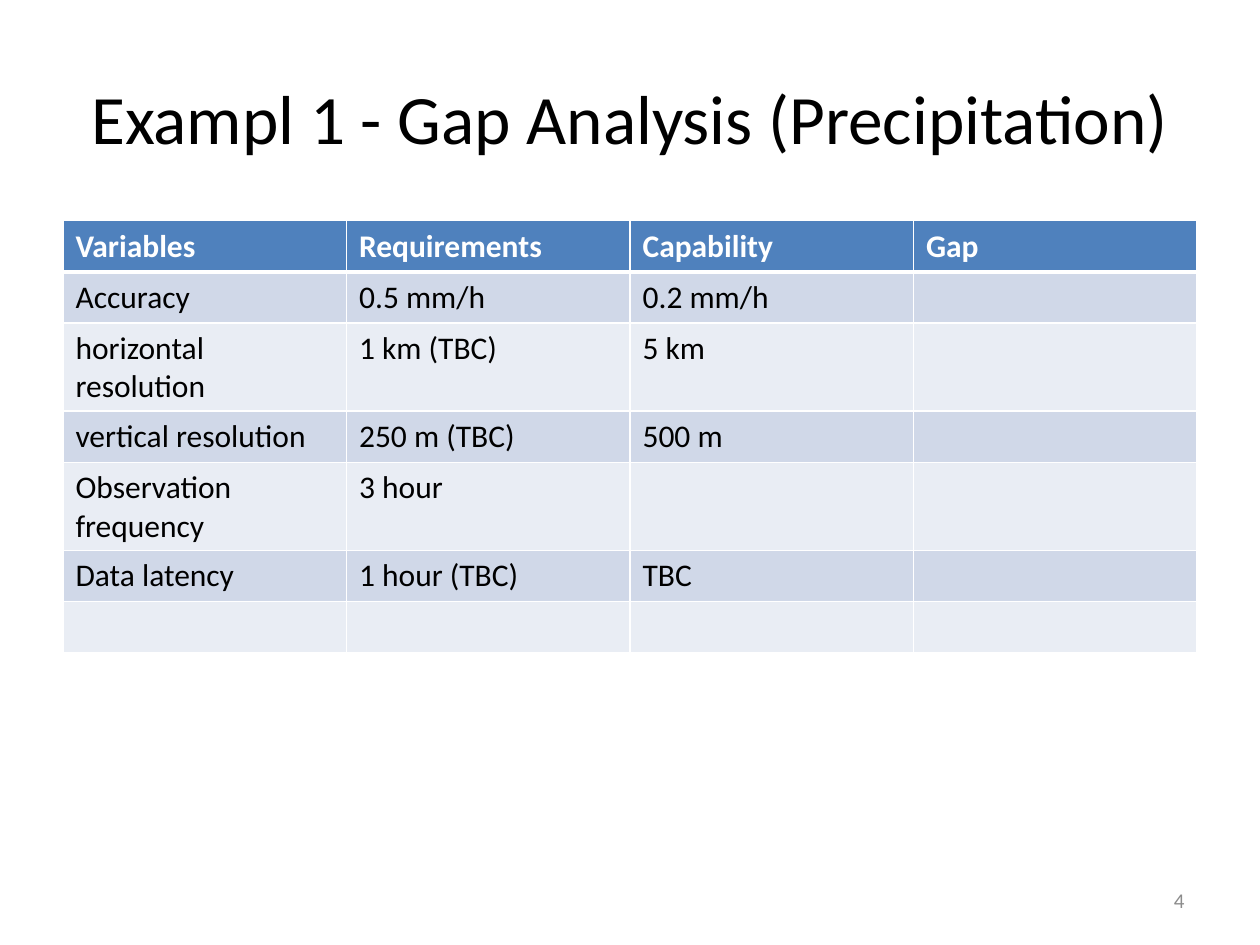
from dataclasses import dataclass

from lxml import etree
from pptx import Presentation
from pptx import util as u
from pptx.dml.color import RGBColor
from pptx.enum import text
from pptx.oxml import ns

FONT = "Calibri"
BLACK = RGBColor(0x00, 0x00, 0x00)
WHITE = RGBColor(0xFF, 0xFF, 0xFF)
GREY = RGBColor(0x8C, 0x8C, 0x8C)
HEADER_BLUE = RGBColor(0x4F, 0x81, 0xBD)
BAND_DARK = RGBColor(0xD0, 0xD8, 0xE8)
BAND_LIGHT = RGBColor(0xE9, 0xED, 0xF4)

ROW_HEIGHT = u.Cm(1.03)


@dataclass
class Area:
    left: float
    top: float
    width: float
    height: float

    def lengths(self) -> list[u.Cm]:
        return [u.Cm(v) for v in (self.left, self.top, self.width, self.height)]


@dataclass
class GapRow:
    variable: str = ""
    requirement: str = ""
    capability: str = ""
    gap: str = ""

    def cells(self) -> tuple[str, ...]:
        return self.variable, self.requirement, self.capability, self.gap


TITLE_AREA = Area(1.27, 0.76, 22.86, 3.18)
TABLE_AREA = Area(1.27, 4.45, 22.86, 7.21)
NUMBER_AREA = Area(18.2, 17.65, 5.93, 1.01)

ROWS = [
    GapRow("Variables", "Requirements", "Capability", "Gap"),
    GapRow("Accuracy", "0.5 mm/h", "0.2 mm/h"),
    GapRow("horizontal resolution", "1 km (TBC)", "5 km"),
    GapRow("vertical resolution", "250 m (TBC)", "500 m"),
    GapRow("Observation frequency", "3 hour"),
    GapRow("Data latency", "1 hour (TBC)", "TBC"),
    GapRow(),
]


def write(frame, words: str, *, size: float, color: RGBColor = BLACK,
          bold: bool = False, align=text.PP_ALIGN.LEFT) -> None:
    para = frame.paragraphs[0]
    para.alignment = align
    span = para.add_run()
    span.text = words
    span.font.name = FONT
    span.font.size = u.Pt(size)
    span.font.bold = bold
    span.font.color.rgb = color


def add_text(page, area: Area, words: str, **style) -> None:
    frame = page.shapes.add_textbox(*area.lengths()).text_frame
    frame.word_wrap = True
    frame.vertical_anchor = text.MSO_ANCHOR.MIDDLE
    write(frame, words, **style)


def add_borders(cell, widths: dict[str, float]) -> None:
    """Draw white borders; widths maps the sides L, R, T, B to points."""
    properties = cell._tc.get_or_add_tcPr()
    for side, width in widths.items():
        line = etree.SubElement(properties, ns.qn(f"a:ln{side}"), w=str(u.Pt(width)))
        fill = etree.SubElement(line, ns.qn("a:solidFill"))
        etree.SubElement(fill, ns.qn("a:srgbClr"), val=str(WHITE))


def add_gap_table(page, area: Area, rows: list[GapRow]) -> None:
    columns = len(rows[0].cells())
    table = page.shapes.add_table(len(rows), columns, *area.lengths()).table
    for r, row in enumerate(rows):
        table.rows[r].height = ROW_HEIGHT
        header = r == 0
        band = HEADER_BLUE if header else BAND_DARK if r % 2 else BAND_LIGHT
        borders = {"L": 1, "R": 1, "T": 3 if r == 1 else 1, "B": 3 if header else 1}
        for c, words in enumerate(row.cells()):
            cell = table.cell(r, c)
            add_borders(cell, borders)
            cell.fill.solid()
            cell.fill.fore_color.rgb = band
            if words:
                write(cell.text_frame, words, size=18, bold=header,
                      color=WHITE if header else BLACK)


def main() -> None:
    deck = Presentation()
    deck.slide_width, deck.slide_height = u.Cm(25.4), u.Cm(19.05)
    page = deck.slides.add_slide(deck.slide_layouts[6])
    add_text(page, TITLE_AREA, "Exampl 1 - Gap Analysis (Precipitation)",
             size=39.6, align=text.PP_ALIGN.CENTER)
    add_gap_table(page, TABLE_AREA, ROWS)
    add_text(page, NUMBER_AREA, "4", size=12, color=GREY, align=text.PP_ALIGN.RIGHT)
    deck.save("out.pptx")


if __name__ == "__main__":
    main()
